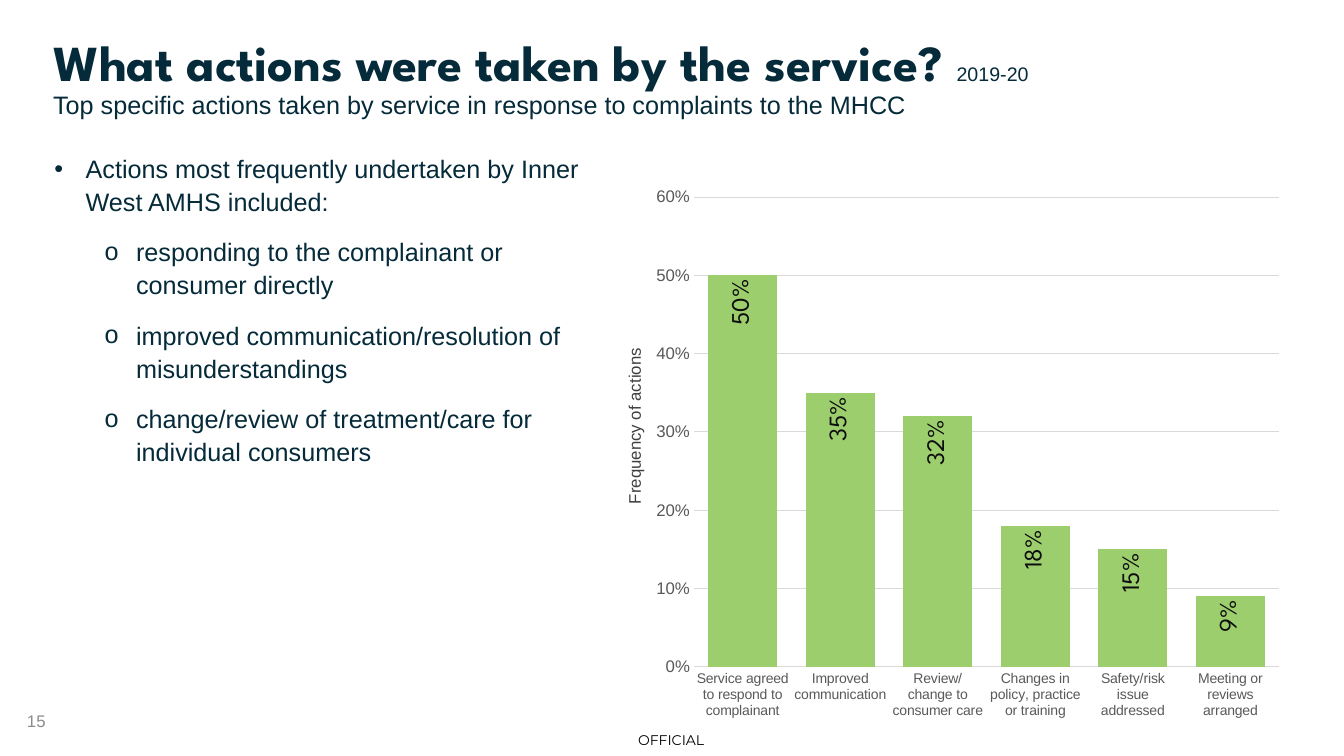
from lxml.etree import SubElement
from pptx import Presentation
from pptx.chart.data import CategoryChartData
from pptx.dml.color import RGBColor
from pptx.enum.chart import XL_CHART_TYPE, XL_LABEL_POSITION, XL_TICK_MARK
from pptx.enum.text import MSO_ANCHOR, PP_ALIGN
from pptx.oxml import parse_xml
from pptx.oxml.ns import nsdecls, qn
from pptx.util import Cm, Pt

COLORS = {
    "navy": "052A39",
    "bar": "9DCE6E",
    "grid": "D9D9D9",
    "axis": "595959",
    "axis_title": "404040",
    "label": "0D0D0D",
    "number": "8C8C8C",
    "black": "000000",
}
BODY_FONT = "Arial"
HEADING_FONT = "League Spartan"

ACTIONS = {
    "Service agreed to respond to complainant": 0.50,
    "Improved communication": 0.35,
    "Review/change to consumer care": 0.32,
    "Changes in policy, practice or training": 0.18,
    "Safety/risk issue addressed": 0.15,
    "Meeting or reviews arranged": 0.09,
}
# Each bullet: outline level and text
BULLETS = [
    (0, "Actions most frequently undertaken by Inner West AMHS included:"),
    (1, "responding to the complainant or consumer directly"),
    (1, "improved communication/resolution of misunderstandings"),
    (1, "change/review of treatment/care for individual consumers"),
]
# Each level: bullet character and left margin
BULLET_STYLES = [("•", Cm(0.79)), ("o", Cm(2.06))]


def color(name):
    return RGBColor.from_string(COLORS[name])


def style_font(font, size, color_name, name=BODY_FONT, bold=False):
    font.size = Pt(size)
    font.name = name
    font.bold = bold
    font.color.rgb = color(color_name)


def add_text_box(slide, left, top, width, height, anchor=MSO_ANCHOR.TOP):
    box = slide.shapes.add_textbox(Cm(left), Cm(top), Cm(width), Cm(height))
    box.text_frame.word_wrap = True
    box.text_frame.vertical_anchor = anchor
    return box


def add_label(slide, place, text, size, color_name, font=BODY_FONT,
              align=PP_ALIGN.LEFT):
    box = add_text_box(slide, *place, anchor=MSO_ANCHOR.MIDDLE)
    paragraph = box.text_frame.paragraphs[0]
    paragraph.text = text
    paragraph.alignment = align
    style_font(paragraph.runs[0].font, size, color_name, font)
    return box


def add_heading(slide):
    frame = add_text_box(slide, 1.09, 0.84, 31.7, 2.36).text_frame
    title = frame.paragraphs[0]
    title.text = "What actions were taken by the service? "
    style_font(title.runs[0].font, 36, "navy", HEADING_FONT, bold=True)
    period = title.add_run()
    period.text = "2019-20"
    style_font(period.font, 14, "navy")

    subtitle = frame.add_paragraph()
    subtitle.text = "Top specific actions taken by service in response to complaints to the MHCC"
    style_font(subtitle.runs[0].font, 18, "navy")
    for paragraph in frame.paragraphs:
        paragraph.line_spacing = 0.9


def set_bullet(paragraph, level):
    character, margin = BULLET_STYLES[level]
    properties = paragraph._p.get_or_add_pPr()
    properties.set("marL", str(margin))
    properties.set("indent", str(-BULLET_STYLES[0][1]))
    bullet_color = SubElement(properties, qn("a:buClr"))
    SubElement(bullet_color, qn("a:srgbClr"), val=COLORS["navy"])
    SubElement(properties, qn("a:buFont"), typeface=BODY_FONT)
    SubElement(properties, qn("a:buChar"), char=character)


def add_bullets(slide):
    frame = add_text_box(slide, 1.12, 3.66, 14.33, 8.26).text_frame
    frame.text = "\n".join(text for _, text in BULLETS)
    for index, (level, _) in enumerate(BULLETS):
        paragraph = frame.paragraphs[index]
        paragraph.level = level
        set_bullet(paragraph, level)
        paragraph.line_spacing = 1.1
        paragraph.space_before = Pt(6 if index else 0)
        paragraph.space_after = Pt(6)
        style_font(paragraph.runs[0].font, 18, "navy")


def set_plot_layout(chart, x, y, width, height):
    plot_area = chart._chartSpace.chart.plotArea
    for layout in plot_area.findall(qn("c:layout")):
        plot_area.remove(layout)
    plot_area.insert(0, parse_xml(
        f'<c:layout {nsdecls("c")}><c:manualLayout>'
        '<c:layoutTarget val="inner"/><c:xMode val="edge"/><c:yMode val="edge"/>'
        f'<c:x val="{x}"/><c:y val="{y}"/><c:w val="{width}"/><c:h val="{height}"/>'
        '</c:manualLayout></c:layout>'))


def style_axis(axis, size):
    axis.major_tick_mark = axis.minor_tick_mark = XL_TICK_MARK.NONE
    style_font(axis.tick_labels.font, size, "axis")


def style_line(line):
    line.color.rgb = color("grid")
    line.width = Pt(0.75)


def add_actions_chart(slide):
    data = CategoryChartData(number_format="0%")
    data.categories = list(ACTIONS)
    data.add_series("Series 1", list(ACTIONS.values()))
    chart = slide.shapes.add_chart(
        XL_CHART_TYPE.COLUMN_CLUSTERED,
        Cm(16.54), Cm(1.98), Cm(16.2), Cm(16.33), data).chart
    chart.has_legend = False
    chart.has_title = False
    style_font(chart.font, 10, "black")
    set_plot_layout(chart, 0.058, 0.183, 0.911, 0.725)

    # Axes
    style_axis(chart.category_axis, 10)
    style_line(chart.category_axis.format.line)
    value_axis = chart.value_axis
    style_axis(value_axis, 12)
    value_axis.minimum_scale = 0
    value_axis.maximum_scale = 0.6
    value_axis.major_unit = 0.1
    value_axis.tick_labels.number_format = "0%"
    value_axis.tick_labels.number_format_is_linked = False
    value_axis.format.line.fill.background()
    style_line(value_axis.major_gridlines.format.line)

    # Columns
    plot = chart.plots[0]
    plot.gap_width = 41
    plot.vary_by_categories = False
    series = plot.series[0]
    series.format.fill.solid()
    series.format.fill.fore_color.rgb = color("bar")

    # Upright value labels
    labels = series.data_labels
    labels.show_value = True
    labels.position = XL_LABEL_POSITION.INSIDE_END
    labels.number_format = "0%"
    labels.number_format_is_linked = False
    style_font(labels.font, 18, "label", HEADING_FONT)
    body = labels._element.find(f'{qn("c:txPr")}/{qn("a:bodyPr")}')
    body.set("rot", "-5400000")
    body.set("vert", "horz")


def main():
    presentation = Presentation()
    presentation.slide_width = Cm(33.87)
    presentation.slide_height = Cm(19.05)
    slide = presentation.slides.add_slide(presentation.slide_layouts[6])

    # Footer
    marking = add_label(slide, (15.62, 18.26, 2.59, 0.79), "OFFICIAL", 10,
                        "black", "Montserrat", PP_ALIGN.CENTER)
    frame = marking.text_frame
    frame.margin_left = frame.margin_right = frame.margin_top = frame.margin_bottom = 0
    add_label(slide, (0.43, 17.65, 7.62, 1.02), "15", 12, "number")

    # Content
    add_bullets(slide)
    add_actions_chart(slide)
    add_heading(slide)
    axis_title = add_label(slide, (13, 10.19, 5.97, 1.09), "Frequency of actions",
                           12, "axis_title", align=PP_ALIGN.CENTER)
    axis_title.rotation = 270

    presentation.save("out.pptx")


if __name__ == "__main__":
    main()
